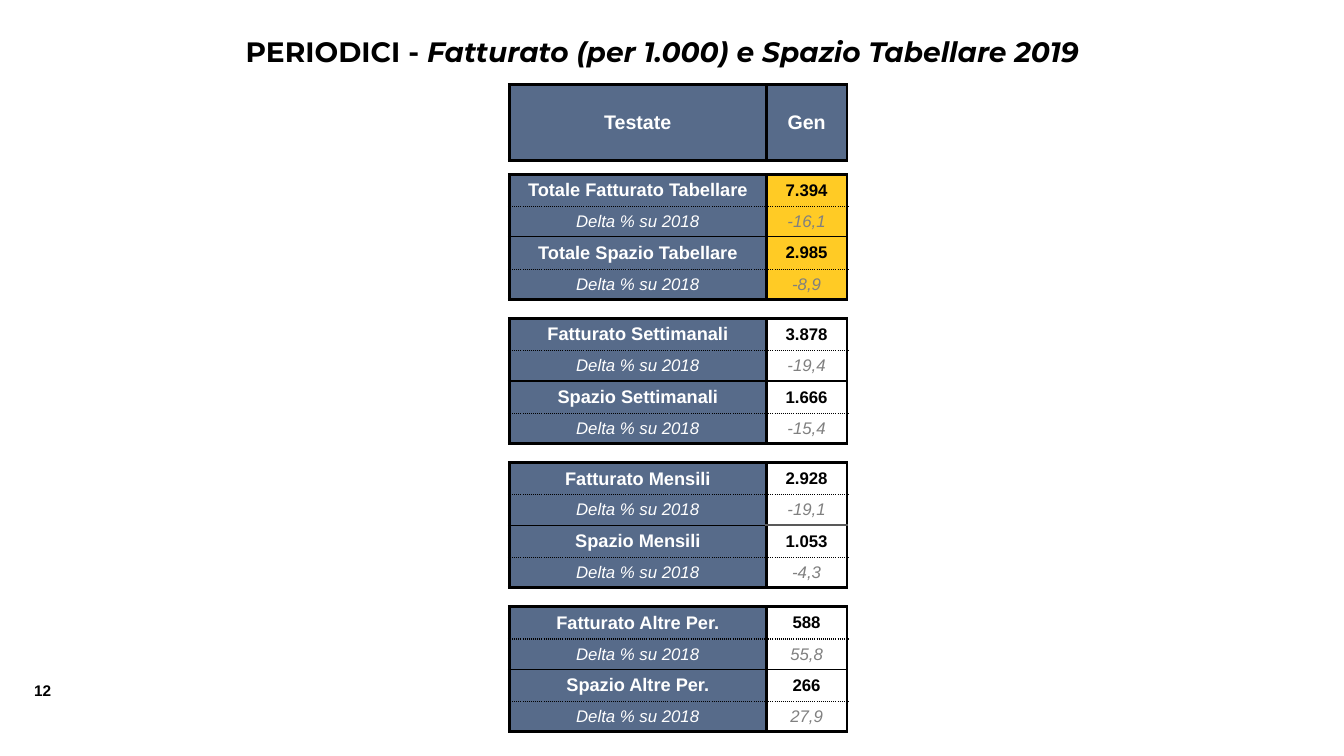
from lxml import etree
from pptx import Presentation
from pptx.dml.color import RGBColor
from pptx.enum import text
from pptx.oxml.ns import qn
from pptx.util import Inches, Pt

COLORS = {"black": "000000", "white": "FFFFFF", "slate": "576B8A",
          "yellow": "FFCB25", "gray": "808080", "dark": "595959"}
THICK = ("black", 2.25, "solid")
THIN = ("black", 1, "solid")
DOTTED = ("black", 1, "sysDot")
MIDDLE = ("dark", 1.5, "solid")
HEADER_H, FIRST_GAP, GAP, TOTAL_H, DELTA_H = 0.75, 0.14, 0.19, 0.32, 0.3
DELTA = "Delta % su 2018"
GROUPS = [
    ("Totale Fatturato Tabellare", "Totale Spazio Tabellare",
     ("7.394", "-16,1", "2.985", "-8,9"), "yellow", THIN),
    ("Fatturato Settimanali", "Spazio Settimanali",
     ("3.878", "-19,4", "1.666", "-15,4"), "white", THIN),
    ("Fatturato Mensili", "Spazio Mensili",
     ("2.928", "-19,1", "1.053", "-4,3"), "white", MIDDLE),
    ("Fatturato Altre Per.", "Spazio Altre Per.",
     ("588", "55,8", "266", "27,9"), "white", THIN),
]


def style_run(r, size, color, bold=True, italic=False, name="Arial"):
    r.font.size, r.font.name = Pt(size), name
    r.font.bold, r.font.italic = bold, italic
    r.font.color.rgb = RGBColor.from_string(COLORS[color])


def style_cell(cell, fill, top, bottom, side=THICK, margins=(0, 0)):
    tcPr = cell._tc.get_or_add_tcPr()
    for tag, line in (("lnL", side), ("lnR", side), ("lnT", top), ("lnB", bottom)):
        ln = etree.SubElement(tcPr, qn(f"a:{tag}"))
        if line is None:
            etree.SubElement(ln, qn("a:noFill"))
            continue
        color, width, dash = line
        ln.set("w", str(Pt(width)))
        paint = etree.SubElement(ln, qn("a:solidFill"))
        etree.SubElement(paint, qn("a:srgbClr")).set("val", COLORS[color])
        etree.SubElement(ln, qn("a:prstDash")).set("val", dash)
    cell.fill.solid()
    cell.fill.fore_color.rgb = RGBColor.from_string(COLORS[fill])
    cell.margin_left = cell.margin_right = Inches(margins[0])
    cell.margin_top = cell.margin_bottom = Inches(margins[1])
    cell.vertical_anchor = text.MSO_ANCHOR.MIDDLE
    cell.text_frame.paragraphs[0].alignment = text.PP_ALIGN.CENTER


prs = Presentation()
prs.slide_width, prs.slide_height = Inches(13.33), Inches(7.5)
s = prs.slides.add_slide(prs.slide_layouts[6])

number = s.shapes.add_textbox(Inches(0.24), Inches(6.71), Inches(0.42), Inches(0.29))
number.text_frame.word_wrap = False
number.text_frame.text = "12"
style_run(number.text_frame.paragraphs[0].runs[0], 11, "black")

heights = [HEADER_H]
for i in range(len(GROUPS)):
    heights += [GAP if i else FIRST_GAP] + [TOTAL_H, DELTA_H] * 2
frame = s.shapes.add_table(len(heights), 2, Inches(5.05), Inches(0.84),
                           Inches(3.35), Inches(sum(heights)))
table = frame.table
table.first_row = table.horz_banding = False
table.columns[0].width, table.columns[1].width = Inches(2.55), Inches(0.8)
for row, height in zip(table.rows, heights):
    row.height = Inches(height)

for col, heading in enumerate(("Testate", "Gen")):
    cell = table.cell(0, col)
    cell.text = heading
    style_cell(cell, "slate", THICK, THICK, margins=(0.1, 0.05))
    style_run(cell.text_frame.paragraphs[0].runs[0], 14, "white")

for i, (revenue, space, values, value_fill, divider) in enumerate(GROUPS):
    gap_row = 1 + 5 * i
    for col in range(2):
        cell = table.cell(gap_row, col)
        style_cell(cell, "white", THICK, THICK, side=None)
        cell.text_frame.paragraphs[0].font.size = Pt(6)
    for k, (label, value) in enumerate(zip((revenue, DELTA, space, DELTA), values)):
        is_delta = k % 2 == 1
        name_cell, value_cell = (table.cell(gap_row + 1 + k, col) for col in range(2))
        name_cell.text, value_cell.text = label, value
        for cell, fill, middle, margins in (
                (name_cell, "slate", THIN, (0.1, 0.05)),
                (value_cell, value_fill, divider, (0, 0))):
            edges = (THICK, DOTTED, middle, DOTTED, THICK)
            style_cell(cell, fill, edges[k], edges[k + 1], margins=margins)
        style_run(name_cell.text_frame.paragraphs[0].runs[0],
                  12 if is_delta else 13, "white", not is_delta, is_delta)
        style_run(value_cell.text_frame.paragraphs[0].runs[0],
                  12, "gray" if is_delta else "black", not is_delta, is_delta)

title = s.shapes.add_textbox(Inches(1.57), Inches(0.29), Inches(10), Inches(0.44))
title.text_frame.word_wrap = True
p = title.text_frame.paragraphs[0]
p.alignment = text.PP_ALIGN.CENTER
for part, italic in (("PERIODICI - ", False),
                     ("Fatturato (per 1.000) e Spazio Tabellare 2019", True)):
    r = p.add_run()
    r.text = part
    style_run(r, 20, "black", italic=italic, name="Montserrat")

prs.save("out.pptx")
